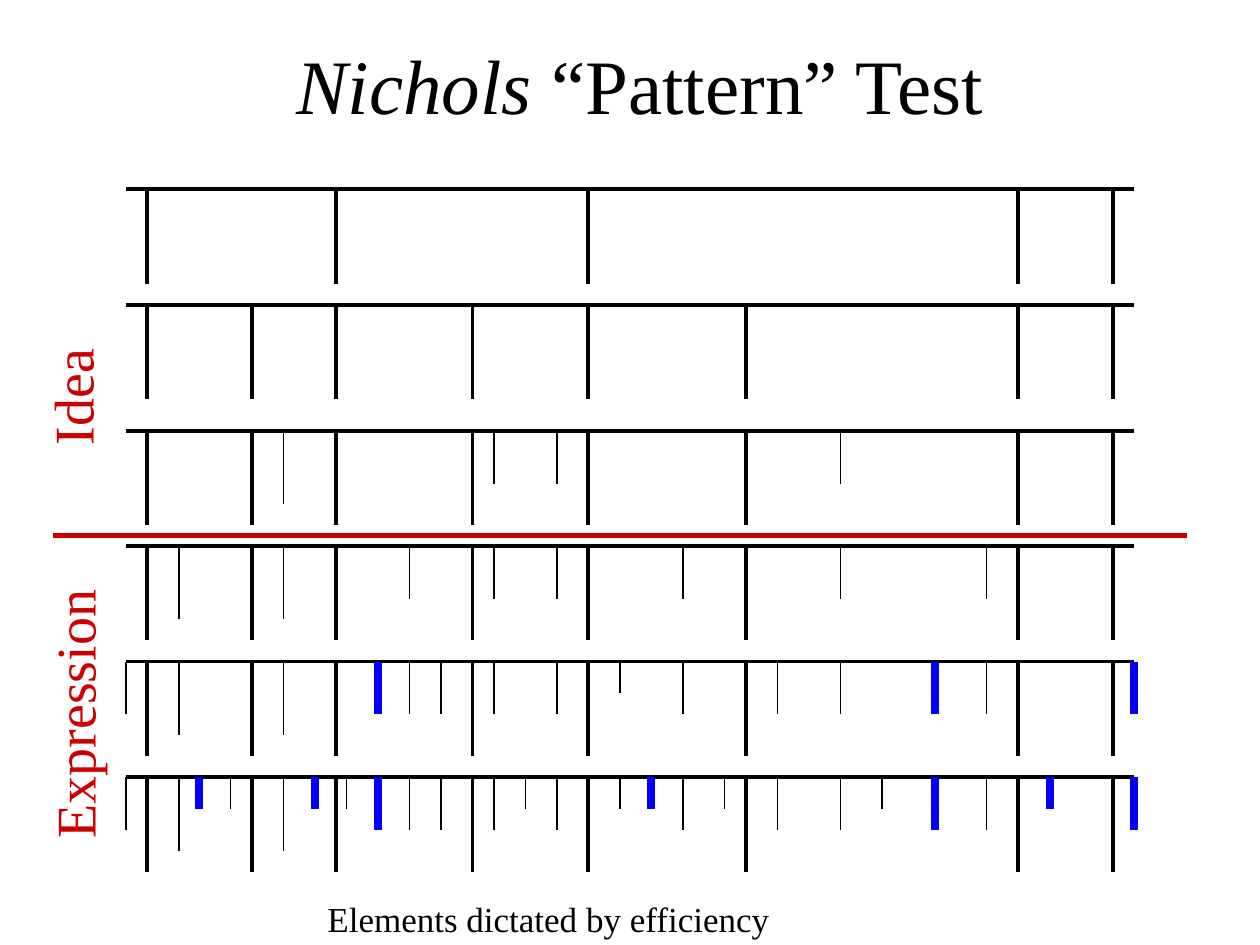
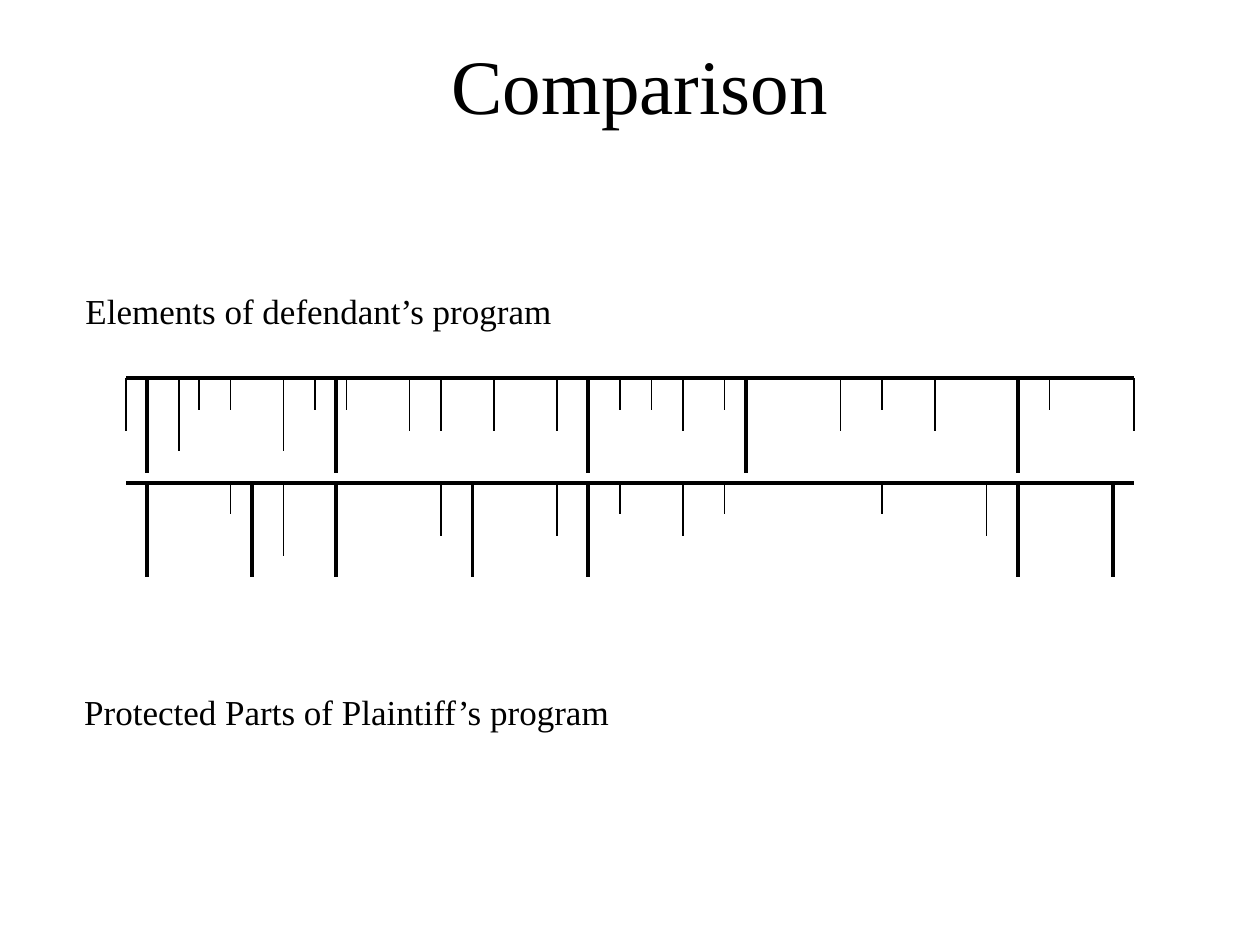
from pptx import Presentation
from pptx.dml.color import RGBColor
from pptx.enum.shapes import MSO_CONNECTOR
from pptx.enum.text import MSO_ANCHOR, PP_ALIGN
from pptx.oxml.ns import qn
from pptx.util import Inches, Pt
from lxml import etree

STRAIGHT = MSO_CONNECTOR.STRAIGHT
MIDDLE = MSO_ANCHOR.MIDDLE
CENTER, LEFT = PP_ALIGN.CENTER, PP_ALIGN.LEFT
FONT = "Times New Roman"
BLACK = RGBColor(0x00, 0x00, 0x00)
BLUE = RGBColor(0x00, 0x00, 0xFF)
RED = RGBColor(0xCC, 0x00, 0x00)

TITLE_BOX = (0.83, 0.25, 8.5, 0.83)
ROW_LEFT, ROW_RIGHT = 1, 9

# The position of an element along a row fixes how far it hangs down.
MAJOR = [1.17, 2, 2.67, 3.75, 4.67, 5.92, 8.08, 8.83]
LONG = [1.42, 2.25]
SHORT = [1.58, 1.83, 2.5, 2.75, 4.17, 4.92, 5.17, 5.75, 7, 8.33]
DROP = {x: 0.42 for x in (1, 3, 3.25, 3.5, 3.92, 4.42, 5.42, 6.17, 6.67, 7.42, 7.83, 9)}
DROP.update({x: 0.75 for x in MAJOR})
DROP.update({x: 0.58 for x in LONG})
DROP.update({x: 0.25 for x in SHORT})
EFFICIENCY = [1.58, 2.5, 3, 5.17, 7.42, 8.33, 9]

# Each level of the pattern keeps the elements above it and adds these.
LEVELS = [
    (1.5, [1.17, 2.67, 4.67, 8.08, 8.83]),
    (2.42, [2, 3.75, 5.92]),
    (3.42, [2.25, 3.92, 4.42, 6.67]),
    (4.33, [1.42, 3.25, 5.42, 7.83]),
    (5.25, [1, 3, 3.5, 4.92, 6.17, 7.42, 9]),
    (6.17, [1.58, 1.83, 2.5, 2.75, 4.17, 5.17, 5.75, 7, 8.33]),
]
PROGRAMS = [
    (3, [1, 1.17, 1.42, 1.58, 1.83, 2.25, 2.5, 2.67, 2.75, 3.25, 3.5, 3.92, 4.42,
         4.67, 4.92, 5.17, 5.42, 5.75, 5.92, 6.67, 7, 7.42, 8.08, 8.33, 9]),
    (3.83, [1.17, 1.83, 2, 2.25, 2.67, 3.5, 3.75, 4.42, 4.67, 4.92, 5.42, 5.75,
            7, 7.83, 8.08, 8.83]),
]


def add_line(s, x1, y1, x2, y2, color=BLACK, width=2.25):
    line = s.shapes.add_connector(STRAIGHT, Inches(x1), Inches(y1), Inches(x2), Inches(y2))
    line.line.color.rgb = color
    line.line.width = Pt(width)
    etree.SubElement(line._element.spPr, qn("a:effectLst"))


def add_text(s, box, text, size, color=BLACK, align=LEFT, wrap=False):
    tb = s.shapes.add_textbox(*[Inches(v) for v in box])
    tf = tb.text_frame
    tf.word_wrap = wrap
    p = tf.paragraphs[0]
    p.text = text
    p.alignment = align
    for r in p.runs:
        r.font.name = FONT
        r.font.size = Pt(size)
        r.font.color.rgb = color
    return tb


prs = Presentation()
prs.slide_width, prs.slide_height = Inches(10), Inches(7.5)

pattern_rows, elements = [], []
for top, added in LEVELS:
    elements = elements + added
    pattern_rows.append((top, elements))

slides = []
for title, rows, blue in (
    ("Nichols “Pattern” Test", pattern_rows, EFFICIENCY),
    ("Comparison", PROGRAMS, []),
):
    s = prs.slides.add_slide(prs.slide_layouts[6])
    slides.append(s)
    tb = add_text(s, TITLE_BOX, title, 44, align=CENTER, wrap=True)
    tb.text_frame.vertical_anchor = MIDDLE
    for top, row in rows:
        add_line(s, ROW_LEFT, top, ROW_RIGHT, top)
        for x in row:
            color = BLUE if x in blue else BLACK
            width = 4.5 if x in blue else 2.25 if x in MAJOR else 1
            add_line(s, x, top, x, top + DROP[x], color, width)

pattern, comparison = slides

# Set the case name in italics, apart from the rest of the title
p = pattern.shapes[0].text_frame.paragraphs[0]
case_name = p.runs[0]
case_name.text = "Nichols "
case_name.font.italic = True
r = p.add_run()
r.text = "“Pattern” Test"
r.font.name = FONT
r.font.size = Pt(44)
r.font.color.rgb = BLACK

add_line(pattern, 0.42, 4.25, 9.42, 4.25, RED, 3)
for label, box in (("Idea", (0.08, 2.83, 0.97, 0.63)),
                   ("Expression", (-0.51, 5.35, 2.18, 0.63))):
    add_text(pattern, box, label, 32, RED).rotation = 270
add_text(pattern, (2.5, 7.07, 3.71, 0.43), "Elements dictated by efficiency", 20)

add_text(comparison, (0.57, 5.43, 4.37, 0.43), "Protected Parts of Plaintiff’s program", 20)
add_text(comparison, (0.58, 2.25, 3.91, 0.43), "Elements of defendant’s program", 20)

prs.save("out.pptx")
